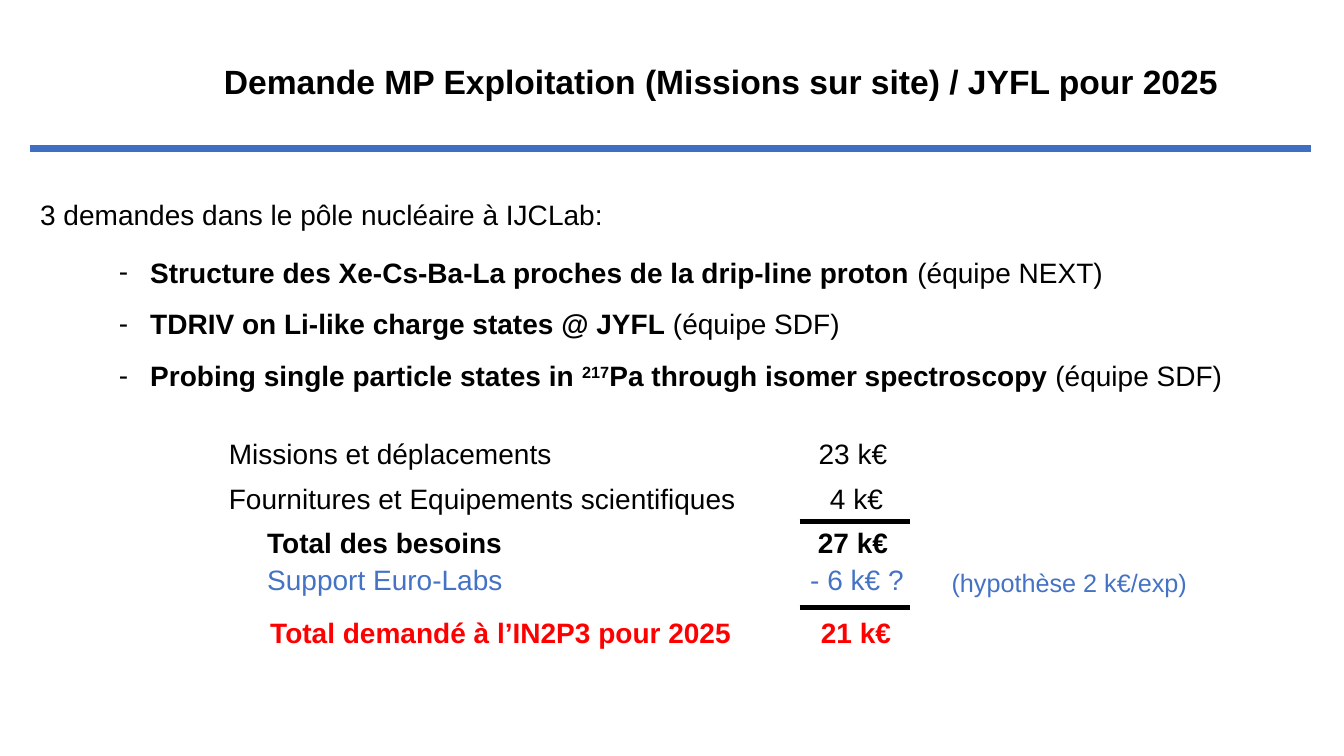
import lxml.etree
import pptx
import pptx.dml.color
import pptx.enum.shapes
import pptx.enum.text
import pptx.oxml.ns
import pptx.util

BLACK, BLUE, RED, RULE = "000000", "4472C4", "FF0000", "3F6EC2"


def px(count):
    return pptx.util.Emu(count * 9144)


def colour(code):
    return pptx.dml.color.RGBColor.from_string(code)


class SlideBuilder:
    """Draw styled elements on one slide, with lengths in px of 1/100 inch."""

    font = "Arial"

    def __init__(self, deck):
        self.page = deck.slides.add_slide(deck.slide_layouts[1])

    def place(self, shape, left, top, width, height):
        shape.left, shape.top = px(left), px(top)
        shape.width, shape.height = px(width), px(height)
        frame = shape.text_frame
        frame.word_wrap = True
        frame.auto_size = pptx.enum.text.MSO_AUTO_SIZE.NONE
        return frame

    def run(self, para, text, size=20, code=BLACK, bold=False, raised=False):
        span = para.add_run()
        span.text = text
        span.font.name = self.font
        span.font.size = pptx.util.Pt(size)
        span.font.bold = bold
        span.font.color.rgb = colour(code)
        if raised:
            span._r.get_or_add_rPr().set("baseline", "30000")

    def title(self, text, *area):
        frame = self.place(self.page.shapes.title, *area)
        frame.vertical_anchor = pptx.enum.text.MSO_ANCHOR.MIDDLE
        para = frame.paragraphs[0]
        para.alignment = pptx.enum.text.PP_ALIGN.CENTER
        self.run(para, text, size=24, bold=True)

    def bullets(self, items, *area):
        frame = self.place(self.page.placeholders[1], *area)
        frame.vertical_anchor = pptx.enum.text.MSO_ANCHOR.TOP
        for index, spans in enumerate(items):
            para = frame.add_paragraph() if index else frame.paragraphs[0]
            para.space_before = pptx.util.Pt(0)
            para.space_after = pptx.util.Pt(13)
            properties = para._p.get_or_add_pPr()
            properties.set("marL", str(px(31)))
            properties.set("indent", str(px(-31)))
            mark = lxml.etree.SubElement(properties, pptx.oxml.ns.qn("a:buChar"))
            mark.set("char", "-")
            for text, style in spans:
                self.run(para, text, **style)

    def text(self, text, *area, size=20, code=BLACK, spacing=1.0):
        box = self.page.shapes.add_textbox(0, 0, 0, 0)
        para = self.place(box, *area).paragraphs[0]
        para.line_spacing = spacing
        self.run(para, text, size=size, code=code)

    def line(self, left, right, top, code, weight):
        line = self.page.shapes.add_connector(
            pptx.enum.shapes.MSO_CONNECTOR.STRAIGHT,
            px(left), px(top), px(right), px(top))
        line.line.color.rgb = colour(code)
        line.line.width = pptx.util.Pt(weight)
        lxml.etree.SubElement(line._element.spPr, pptx.oxml.ns.qn("a:effectLst"))

    def table(self, left, top, row_height, rows, code=BLACK):
        widths = (511, 218)
        table = self.page.shapes.add_table(
            len(rows), 2, px(left), px(top),
            px(sum(widths)), px(row_height * len(rows))).table
        table.first_row = table.horz_banding = False
        for column, width in zip(table.columns, widths):
            column.width = px(width)
        for row, (label, amount, label_indent, amount_indent, bold) in enumerate(rows):
            table.rows[row].height = px(row_height)
            contents = ((label, label_indent, pptx.enum.text.PP_ALIGN.LEFT),
                        (amount, amount_indent, pptx.enum.text.PP_ALIGN.CENTER))
            for column, (text, indent, alignment) in enumerate(contents):
                cell = table.cell(row, column)
                cell.fill.background()
                cell.margin_left, cell.margin_right = px(1 + indent), px(1)
                cell.margin_top = cell.margin_bottom = px(5)
                para = cell.text_frame.paragraphs[0]
                para.alignment = alignment
                self.run(para, text, code=code, bold=bold)


def main():
    deck = pptx.Presentation()
    deck.slide_width, deck.slide_height = px(1333), px(750)
    slide = SlideBuilder(deck)
    strong, plain = {"bold": True}, {}

    slide.title("Demande MP Exploitation (Missions sur site) / JYFL pour 2025",
                130, 55, 1170, 50)
    slide.line(30, 1300, 147, RULE, 5)
    slide.text("3 demandes dans le pôle nucléaire à IJCLab:",
               30, 189, 1270, 43, spacing=1.07)
    slide.bullets([
        [("Structure des Xe-Cs-Ba-La proches de la drip-line proton ", strong),
         ("(équipe NEXT)", plain)],
        [("TDRIV on Li-like charge states @ JYFL ", strong),
         ("(équipe SDF)", plain)],
        [("Probing single particle states in ", strong),
         ("217", {"bold": True, "raised": True}),
         ("Pa through isomer spectroscopy ", strong),
         ("(équipe SDF)", plain)],
    ], 108, 248, 1165, 145)

    slide.table(226, 431, 44, [
        ("Missions et déplacements", "23 k€", 0, 0, False),
        ("Fournitures et Equipements scientifiques", "4 k€", 0, 7, False),
        ("Total des besoins", "27 k€", 38, 0, True),
    ])
    slide.table(226, 556, 43,
                [("Support Euro-Labs", "- 6 k€ ?", 38, 8, False)], BLUE)
    slide.table(229, 608, 51,
                [("Total demandé à l’IN2P3 pour 2025", "21 k€", 38, 0, True)], RED)
    slide.text("(hypothèse 2 k€/exp)", 934, 558, 323, 40, size=18, code=BLUE)
    for top in (517, 603):
        slide.line(793, 903, top, BLACK, 3.5)

    deck.save("out.pptx")


if __name__ == "__main__":
    main()
